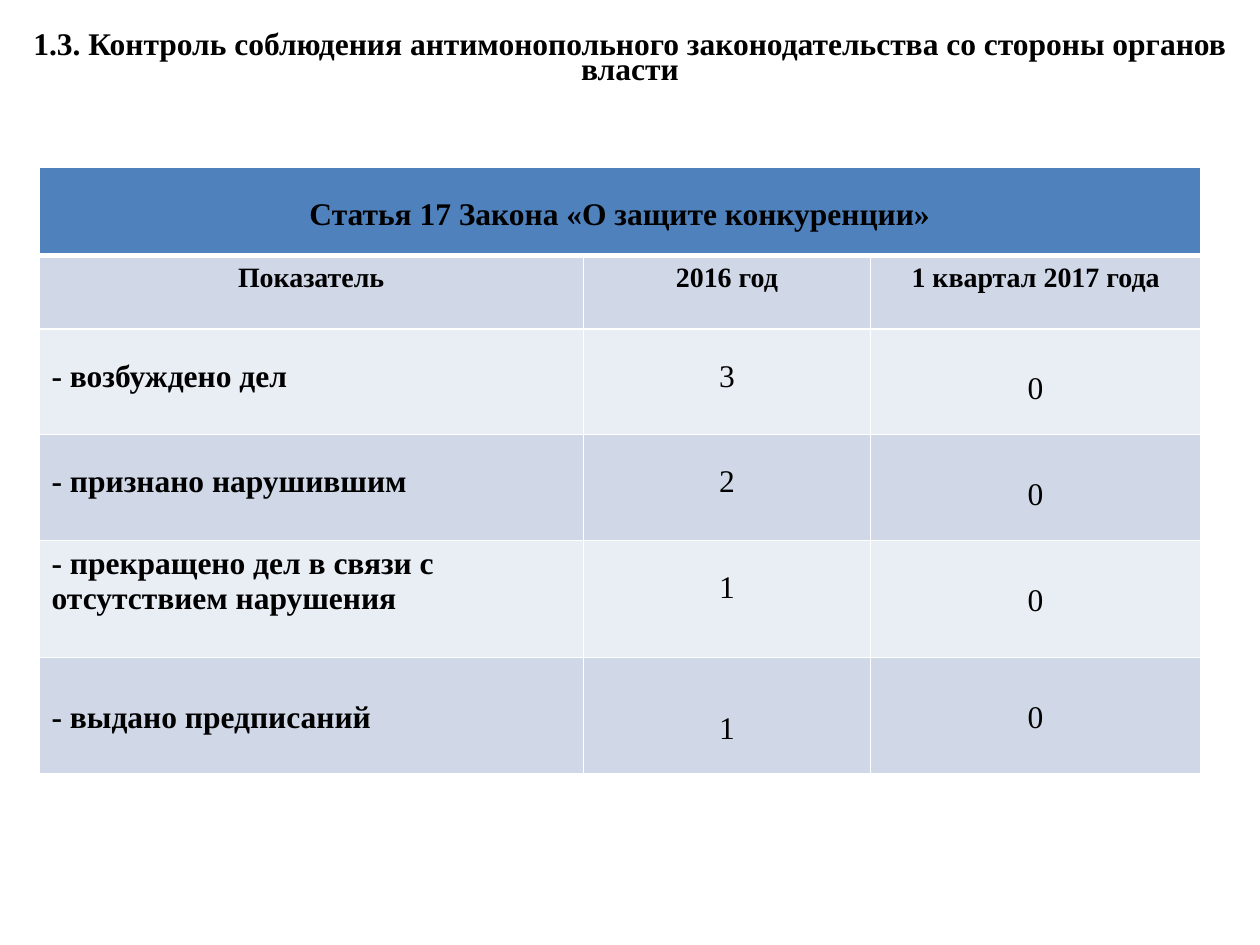
from lxml import etree
from pptx import Presentation, util as u
from pptx.dml.color import RGBColor
from pptx.enum import text
from pptx.oxml import ns

TITLE = "1.3. Контроль соблюдения антимонопольного законодательства со стороны органов власти"
ROWS = [
    ["Статья 17 Закона «О защите конкуренции»", "", ""],
    ["Показатель", "2016 год", "1 квартал 2017 года"],
    ["- возбуждено дел", "3", "0"],
    ["- признано нарушившим", "2", "0"],
    ["- прекращено дел в связи с отсутствием нарушения", "1", "0"],
    ["- выдано предписаний", "1", "0"],
]
COLUMN_WIDTHS = [4.32, 2.28, 2.62]
ROW_HEIGHTS = [0.7, 0.58, 0.84, 0.84, 0.93, 0.92]
TOP_MARGINS = [
    [0.24, 0.05, 0.05],
    [0.05, 0.05, 0.05],
    [0.24, 0.24, 0.34],
    [0.24, 0.24, 0.34],
    [0.05, 0.24, 0.34],
    [0.34, 0.43, 0.34],
]
THEME = {
    "font": "Times New Roman",
    "ink": "000000",
    "header": "4F81BD",
    "bands": ["E9EDF4", "D0D8E8"],
    "border": "FFFFFF",
    "size": 18,
    "heading_size": 16,
}


def write(frame, content, size=THEME["size"], bold=False, center=True, spacing=None):
    frame.word_wrap = True
    paragraph = frame.paragraphs[0]
    paragraph.alignment = text.PP_ALIGN.CENTER if center else text.PP_ALIGN.LEFT
    if spacing:
        paragraph.line_spacing = spacing
    run = paragraph.add_run()
    run.text = content
    run.font.name = THEME["font"]
    run.font.size = u.Pt(size)
    run.font.bold = bold
    run.font.color.rgb = RGBColor.from_string(THEME["ink"])


def set_borders(cell, bottom):
    properties = cell._tc.get_or_add_tcPr()
    for side, width in (("L", 1), ("R", 1), ("T", 1), ("B", bottom)):
        line = etree.SubElement(properties, ns.qn(f"a:ln{side}"), w=str(u.Pt(width)))
        fill = etree.SubElement(line, ns.qn("a:solidFill"))
        etree.SubElement(fill, ns.qn("a:srgbClr"), val=THEME["border"])


def add_indicators(slide):
    frame = slide.shapes.add_table(
        len(ROWS), len(COLUMN_WIDTHS), u.Inches(0.31), u.Inches(1.33),
        u.Inches(sum(COLUMN_WIDTHS)), u.Inches(sum(ROW_HEIGHTS)))
    table = frame.table
    for column, width in zip(table.columns, COLUMN_WIDTHS):
        column.width = u.Inches(width)
    for row, height in zip(table.rows, ROW_HEIGHTS):
        row.height = u.Inches(height)
    table.cell(0, 0).merge(table.cell(0, len(COLUMN_WIDTHS) - 1))
    for r, labels in enumerate(ROWS):
        for c, label in enumerate(labels):
            cell = table.cell(r, c)
            set_borders(cell, bottom=3 if r == 0 else 1)
            color = THEME["bands"][r % 2] if r else THEME["header"]
            cell.fill.solid()
            cell.fill.fore_color.rgb = RGBColor.from_string(color)
            cell.margin_top = u.Inches(TOP_MARGINS[r][c])
            if label:
                write(cell.text_frame, label,
                      size=THEME["heading_size"] if r == 1 else THEME["size"],
                      bold=r < 2 or c == 0, center=r < 2 or c > 0)


def main():
    presentation = Presentation()
    presentation.slide_width = u.Inches(10)
    presentation.slide_height = u.Inches(7.5)
    slide = presentation.slides.add_slide(presentation.slide_layouts[6])
    add_indicators(slide)
    title = slide.shapes.add_textbox(0, u.Inches(0.23), u.Inches(10), u.Inches(0.5))
    write(title.text_frame, TITLE, bold=True, spacing=0.66)
    title.text_frame.auto_size = text.MSO_AUTO_SIZE.SHAPE_TO_FIT_TEXT
    presentation.save("out.pptx")


if __name__ == "__main__":
    main()
